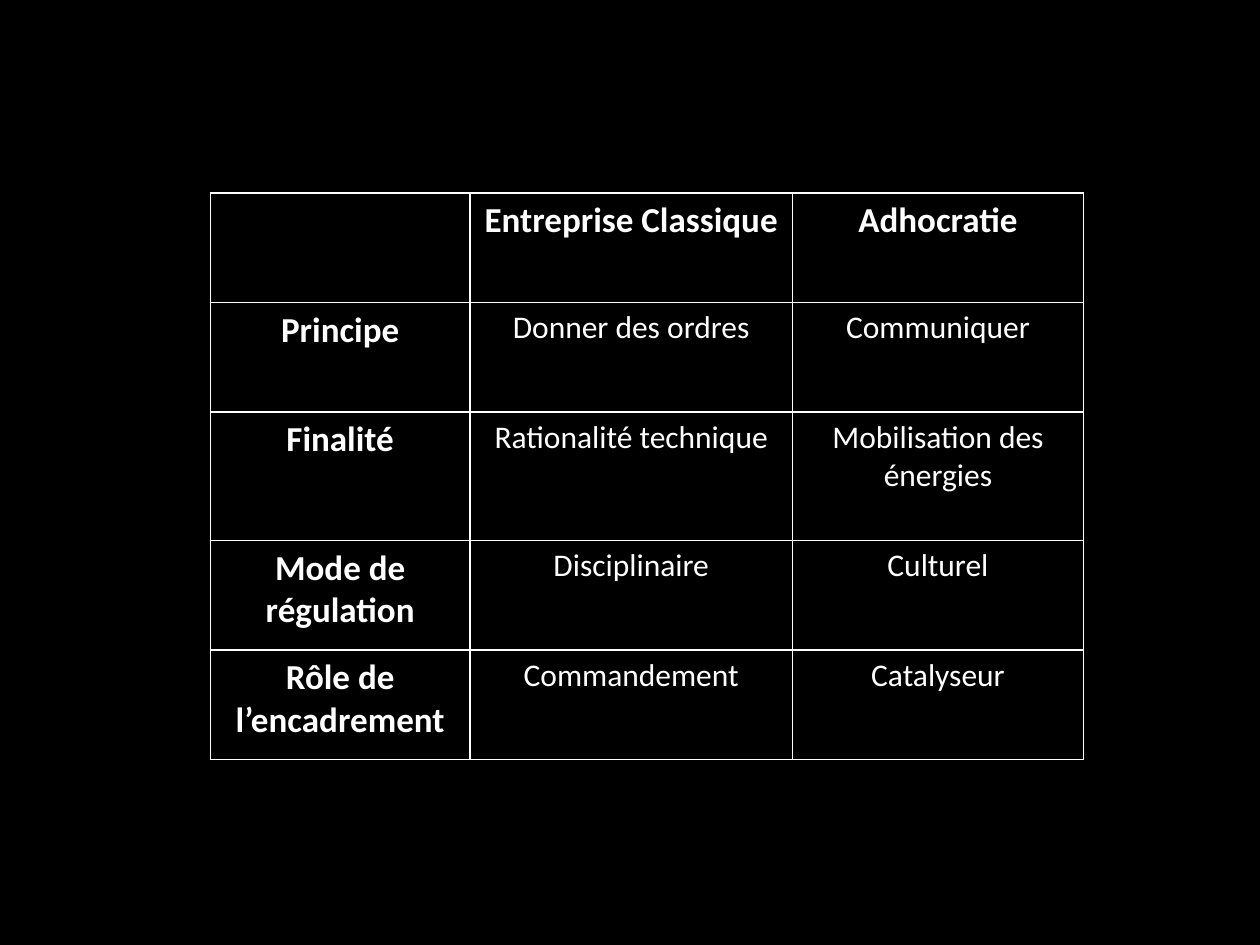
from lxml.etree import SubElement
from pptx import Presentation
from pptx.dml.color import RGBColor
from pptx.enum.text import PP_ALIGN
from pptx.oxml.ns import qn
from pptx.util import Inches, Pt

BLACK = RGBColor(0x00, 0x00, 0x00)
WHITE = RGBColor(0xFF, 0xFF, 0xFF)
FONT = "Calibri"
LEFT, TOP = 1.67, 1.53
COLUMN_WIDTHS = (2.06, 2.56, 2.31)
ROW_HEIGHTS = (0.87, 0.87, 1.02, 0.87, 0.87)
COMPARISON = [
    ("", "Entreprise Classique", "Adhocratie"),
    ("Principe", "Donner des ordres", "Communiquer"),
    ("Finalité", "Rationalité technique", "Mobilisation des énergies"),
    ("Mode de régulation", "Disciplinaire", "Culturel"),
    ("Rôle de l’encadrement", "Commandement", "Catalyseur"),
]


def add_borders(cell):
    properties = cell._tc.get_or_add_tcPr()
    for side in ("a:lnL", "a:lnR", "a:lnT", "a:lnB"):
        border = SubElement(properties, qn(side), w=str(Pt(1)))
        fill = SubElement(border, qn("a:solidFill"))
        SubElement(fill, qn("a:srgbClr"), val=str(WHITE))


def write_cell(cell, wording, is_heading):
    add_borders(cell)
    cell.fill.solid()
    cell.fill.fore_color.rgb = BLACK
    if not wording:
        return
    paragraph = cell.text_frame.paragraphs[0]
    paragraph.alignment = PP_ALIGN.CENTER
    run = paragraph.add_run()
    run.text = wording
    run.font.name = FONT
    run.font.size = Pt(20 if is_heading else 18)
    run.font.bold = is_heading
    run.font.color.rgb = WHITE


def main():
    """Build the slide comparing the classic company with adhocracy."""
    presentation = Presentation()
    presentation.slide_width = Inches(10)
    presentation.slide_height = Inches(7.5)
    slide = presentation.slides.add_slide(presentation.slide_layouts[6])
    slide.background.fill.solid()
    slide.background.fill.fore_color.rgb = BLACK

    table = slide.shapes.add_table(
        len(ROW_HEIGHTS), len(COLUMN_WIDTHS), Inches(LEFT), Inches(TOP),
        Inches(sum(COLUMN_WIDTHS)), Inches(sum(ROW_HEIGHTS)),
    ).table
    table.horz_banding = False
    for column, width in zip(table.columns, COLUMN_WIDTHS):
        column.width = Inches(width)
    for row, height in zip(table.rows, ROW_HEIGHTS):
        row.height = Inches(height)
    for r, entries in enumerate(COMPARISON):
        for c, wording in enumerate(entries):
            write_cell(table.cell(r, c), wording, r == 0 or c == 0)

    presentation.save("out.pptx")


if __name__ == "__main__":
    main()
